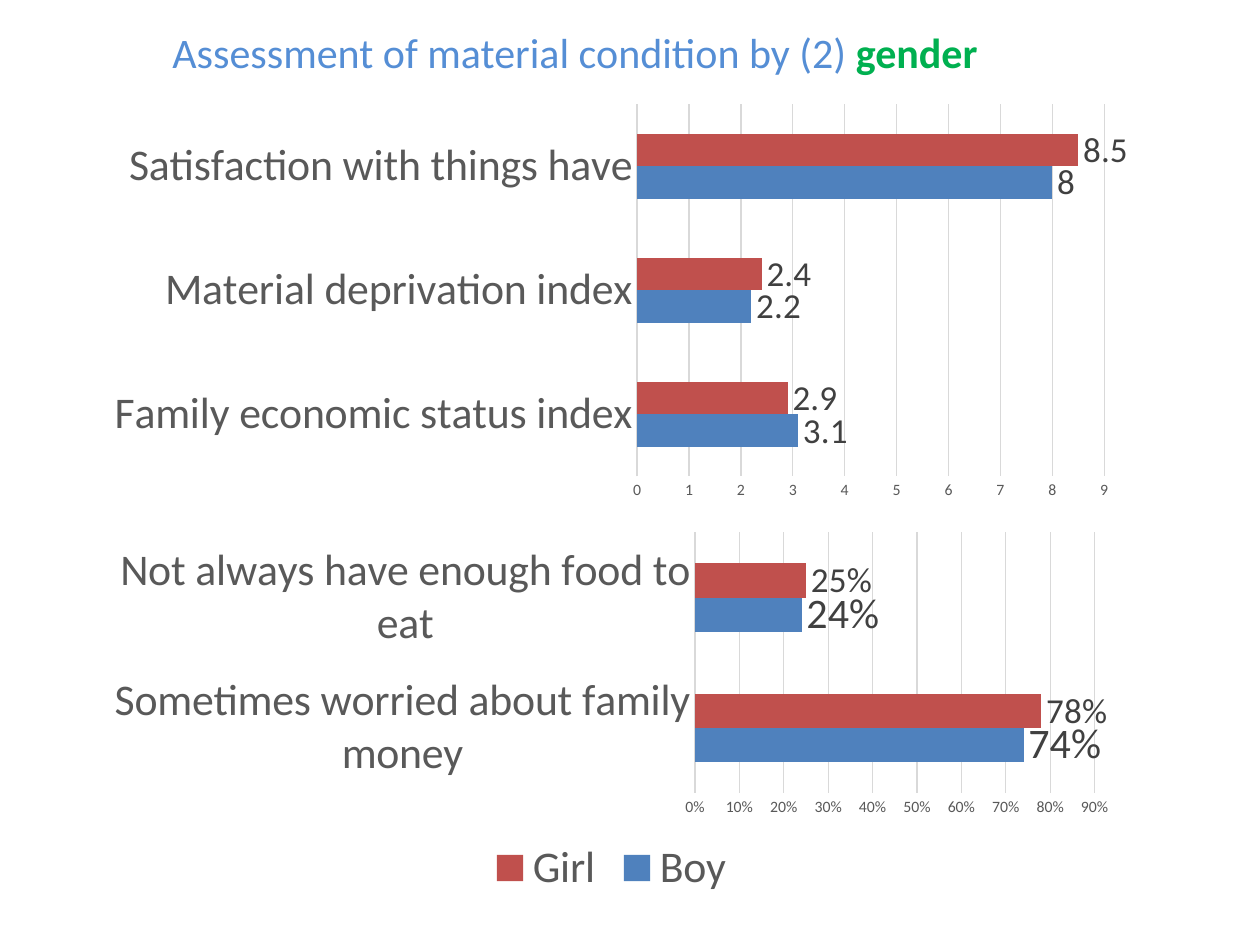
from dataclasses import dataclass

from pptx import Presentation
from pptx import util as u
from pptx.chart import data as chart_data
from pptx.dml.color import RGBColor
from pptx.enum import chart as charts, text

EMU_PER_PX = 914400 / 126


@dataclass(frozen=True)
class Theme:
    font: str = "Calibri"
    title: str = "558ED5"
    accent: str = "00B050"
    boy: str = "4F81BD"
    girl: str = "C0504D"
    axis_text: str = "595959"
    label_text: str = "404040"
    grid: str = "D9D9D9"
    title_size: int = 24
    category_size: int = 25
    label_size: int = 20
    large_label_size: int = 24
    scale_size: int = 9


THEME = Theme()


def px(length):
    return u.Emu(round(length * EMU_PER_PX))


def style_font(font, size, color, bold=False):
    font.name = THEME.font
    font.size = u.Pt(size)
    font.bold = bold
    font.color.rgb = RGBColor.from_string(color)


def add_span(para, words, **style):
    span = para.add_run()
    span.text = words
    style_font(span.font, **style)


def style_line(line):
    line.color.rgb = RGBColor.from_string(THEME.grid)
    line.width = u.Pt(0.75)


def add_title(page, box):
    frame = page.shapes.add_textbox(*map(px, box)).text_frame
    frame.word_wrap = True
    frame.vertical_anchor = text.MSO_ANCHOR.BOTTOM
    para = frame.paragraphs[0]
    para.alignment = text.PP_ALIGN.CENTER
    add_span(para, "Assessment of material condition by (2) ",
             size=THEME.title_size, color=THEME.title)
    add_span(para, "gender", size=THEME.title_size, color=THEME.accent, bold=True)


def add_gender_chart(page, box, categories, series, label_sizes, top, step,
                     number_format="General", legend=False):
    values = chart_data.CategoryChartData(number_format=number_format)
    values.categories = categories
    for name, numbers in series.items():
        values.add_series(name, numbers)
    chart = page.shapes.add_chart(
        charts.XL_CHART_TYPE.BAR_CLUSTERED, *map(px, box), values).chart
    chart.has_title = False
    chart.font.name = THEME.font
    chart.font.size = u.Pt(10)

    # Axes
    names, scale = chart.category_axis, chart.value_axis
    for axis, size in ((names, THEME.category_size), (scale, THEME.scale_size)):
        style_font(axis.tick_labels.font, size, THEME.axis_text)
        axis.major_tick_mark = axis.minor_tick_mark = charts.XL_TICK_MARK.NONE
    style_line(names.format.line)
    scale.format.line.fill.background()
    style_line(scale.major_gridlines.format.line)
    scale.minimum_scale, scale.maximum_scale, scale.major_unit = 0, top, step
    scale.tick_labels.number_format = number_format
    scale.tick_labels.number_format_is_linked = False

    # Bars and their values
    plot = chart.plots[0]
    plot.gap_width = 182
    plot.overlap = 0
    plot.vary_by_categories = False
    for bars, color, size in zip(plot.series, (THEME.boy, THEME.girl), label_sizes):
        bars.invert_if_negative = False
        bars.format.fill.solid()
        bars.format.fill.fore_color.rgb = RGBColor.from_string(color)
        labels = bars.data_labels
        labels.show_value = True
        labels.position = charts.XL_LABEL_POSITION.OUTSIDE_END
        labels.number_format = number_format
        labels.number_format_is_linked = False
        style_font(labels.font, size, THEME.label_text)

    # Legend
    chart.has_legend = legend
    if legend:
        chart.legend.position = charts.XL_LEGEND_POSITION.BOTTOM
        chart.legend.include_in_layout = False
        style_font(chart.legend.font, THEME.category_size, THEME.axis_text)


def main():
    deck = Presentation()
    deck.slide_width, deck.slide_height = px(1260), px(945)
    page = deck.slides.add_slide(deck.slide_layouts[6])

    add_title(page, (-4, 16, 1158, 67))

    # Scores
    add_gender_chart(
        page, (94, 96, 1035, 412),
        ["Family economic status index", "Material deprivation index",
         "Satisfaction with things have"],
        {"Series 1": (3.1, 2.2, 8), "Series 2": (2.9, 2.4, 8.5)},
        label_sizes=(THEME.label_size, THEME.label_size), top=9, step=1)

    # Shares
    add_gender_chart(
        page, (94, 525, 1035, 378),
        ["Sometimes worried about family money",
         "Not always have enough food to eat"],
        {"Boy": (0.74, 0.24), "Girl": (0.78, 0.25)},
        label_sizes=(THEME.large_label_size, THEME.label_size), top=0.9, step=0.1,
        number_format="0%", legend=True)

    deck.save("out.pptx")


if __name__ == "__main__":
    main()
